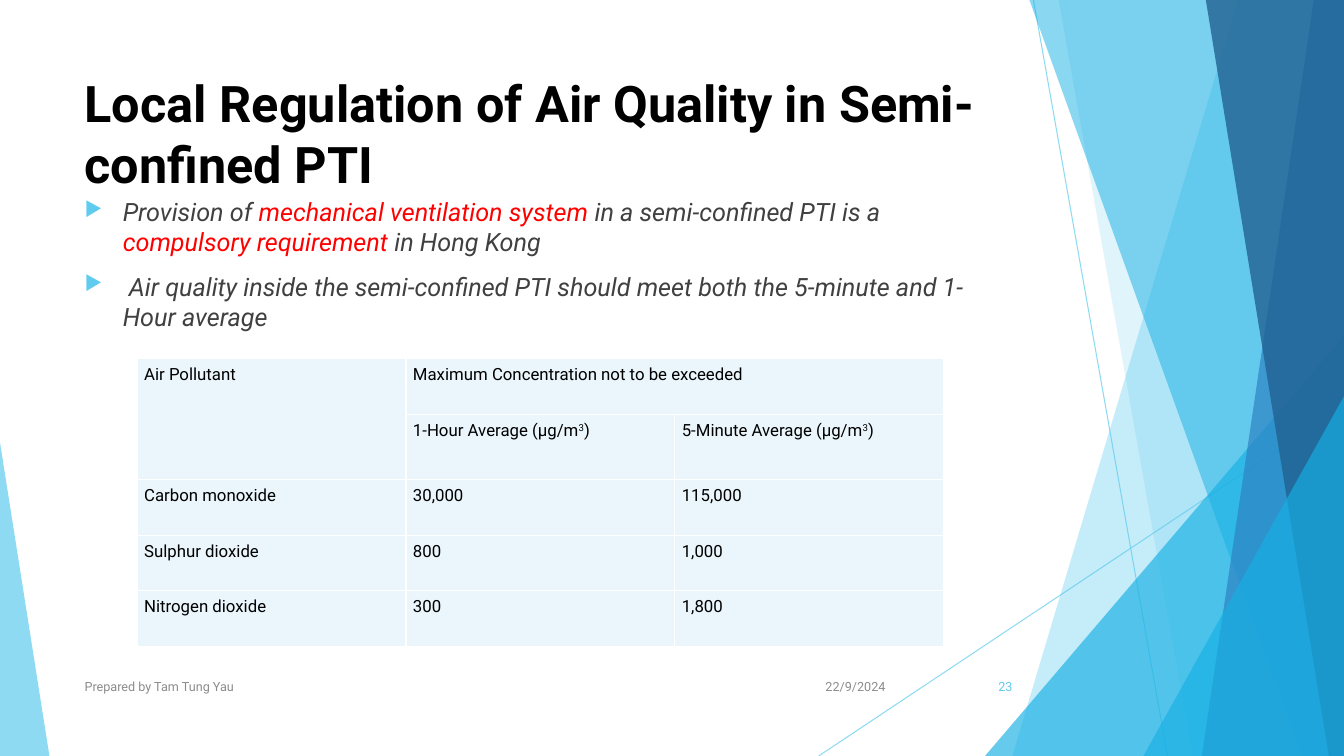
"""Build the slide on local air quality regulation in semi-confined PTIs."""
from lxml import etree
from pptx import Presentation
from pptx.dml.color import RGBColor
from pptx.enum.shapes import MSO_CONNECTOR, MSO_SHAPE
from pptx.enum.text import MSO_ANCHOR, PP_ALIGN
from pptx.oxml.ns import qn
from pptx.util import Inches, Pt

LEFT, RIGHT, JUSTIFY = PP_ALIGN.LEFT, PP_ALIGN.RIGHT, PP_ALIGN.JUSTIFY
TOP, MIDDLE = MSO_ANCHOR.TOP, MSO_ANCHOR.MIDDLE
TRIANGLE, STRAIGHT = MSO_SHAPE.ISOSCELES_TRIANGLE, MSO_CONNECTOR.STRAIGHT

WIDTH, HEIGHT = 13.33, 7.5
MARGIN, CONTENT_WIDTH = 0.74, 9.4
FONT = "Roboto"
SKY, CYAN, BLUE, NAVY = "5FCBEF", "17B0E4", "2E83C3", "226292"
BLACK, DARK, GREY, RED, PALE, WHITE = "000000", "404040", "8C8C8C", "FF0000", "EAF6FC", "FFFFFF"

TITLE = "Local Regulation of Air Quality in Semi-confined PTI"
BULLETS = [
    [("Provision of ", DARK), ("mechanical ventilation system", RED),
     (" in a semi-confined PTI is a ", DARK), ("compulsory requirement ", RED),
     ("in Hong Kong", DARK)],
    [(" Air quality inside the semi-confined PTI should meet both the 5-minute and 1-Hour average", DARK)],
]
LIMITS = [
    ["Air Pollutant", "Maximum Concentration not to be exceeded", ""],
    ["", "1-Hour Average (μg/m^3^)", "5-Minute Average (μg/m^3^)"],
    ["Carbon monoxide", "30,000", "115,000"],
    ["Sulphur dioxide", "800", "1,000"],
    ["Nitrogen dioxide", "300", "1,800"],
]
LIMITS_LEFT, LIMITS_TOP, LIMITS_WIDTH = 1.36, 3.56, 8
ROW_HEIGHTS = [0.55, 0.65, 0.55, 0.55, 0.55]
FOOTERS = [
    ("22/9/2024", 7.88, 1, RIGHT, GREY),
    ("Prepared by Tam Tung Yau", MARGIN, 6.89, LEFT, GREY),
    ("23", 9.39, 0.75, RIGHT, SKY),
]
RAYS = [(10.25, 0, 11.58, HEIGHT), (WIDTH, 4.03, 8.12, HEIGHT)]
# Each band reaches the right edge: top-left x, bottom-left x, colour, opacity.
BANDS_BEHIND = [(12.28, 10.04, SKY, 36), (10.5, 11.83, SKY, 20)]
BANDS_FRONT = [(10.21, 12.91, CYAN, 50), (13.03, 11.92, BLUE, 70), (11.96, 13.18, NAVY, 80)]
WEDGE_BEHIND = (9.77, 3.33, 3.56, 1, CYAN, 66)
WEDGES_FRONT = [(11.34, 3.93, 1.99, 1, CYAN, 66), (0, 4.39, 0.49, 0, SKY, 70)]


def paint(fill, color, opacity=100):
    fill.solid()
    fill.fore_color.rgb = RGBColor.from_string(color)
    if opacity < 100:
        tint = fill._xPr.find(".//" + qn("a:srgbClr"))
        etree.SubElement(tint, qn("a:alpha"), val=str(opacity * 1000))


def style(run, size, color, bold=False, italic=False):
    run.font.name, run.font.size = FONT, Pt(size)
    run.font.bold, run.font.italic = bold, italic
    run.font.color.rgb = RGBColor.from_string(color)


def add_ray(slide, ends):
    ray = slide.shapes.add_connector(STRAIGHT, *map(Inches, ends))
    ray.line.width = Pt(0.75)
    paint(ray.line.fill, SKY, 70)
    etree.SubElement(ray._element.spPr, qn("a:effectLst"))


def finish(shape, color, opacity):
    paint(shape.fill, color, opacity)
    shape.line.fill.background()
    shape.shadow.inherit = False


def add_band(slide, top_x, bottom_x, color, opacity):
    corners = [(top_x, 0), (WIDTH, 0), (WIDTH, HEIGHT), (bottom_x, HEIGHT)]
    points = [(Inches(x), Inches(y)) for x, y in corners]
    outline = slide.shapes.build_freeform(*points[0])
    outline.add_line_segments(points[1:], close=True)
    finish(outline.convert_to_shape(), color, opacity)


def add_wedge(slide, left, top, width, apex, color, opacity):
    wedge = slide.shapes.add_shape(TRIANGLE, *map(Inches, (left, top, width, HEIGHT - top)))
    wedge.adjustments[0] = apex
    finish(wedge, color, opacity)


def add_decor(slide):
    for ends in RAYS:
        add_ray(slide, ends)
    for band in BANDS_BEHIND:
        add_band(slide, *band)
    add_wedge(slide, *WEDGE_BEHIND)
    for band in BANDS_FRONT:
        add_band(slide, *band)
    for wedge in WEDGES_FRONT:
        add_wedge(slide, *wedge)


def add_title(slide):
    title = slide.shapes.title
    title.left, title.top, title.width, title.height = map(Inches, (MARGIN, 0.67, CONTENT_WIDTH, 1.23))
    title.text_frame.text = TITLE
    title.text_frame.word_wrap = True
    title.text_frame.vertical_anchor = TOP
    heading = title.text_frame.paragraphs[0]
    heading.alignment = LEFT
    style(heading.runs[0], 36, BLACK, bold=True)


def add_bullet(paragraph):
    props = paragraph._p.get_or_add_pPr()
    props.set("marL", str(Inches(0.38)))
    props.set("indent", str(-Inches(0.38)))
    tint = etree.SubElement(props, qn("a:buClr"))
    etree.SubElement(tint, qn("a:srgbClr"), val=SKY)
    etree.SubElement(props, qn("a:buSzPct"), val="80000")
    etree.SubElement(props, qn("a:buChar"), char="▶")


def add_body(slide):
    body = slide.shapes.add_textbox(*map(Inches, (MARGIN, 1.9, CONTENT_WIDTH, 4.71))).text_frame
    body.word_wrap = True
    for index, pieces in enumerate(BULLETS):
        paragraph = body.add_paragraph() if index else body.paragraphs[0]
        add_bullet(paragraph)
        paragraph.space_before = Pt(10 if index else 0)
        for text, color in pieces:
            run = paragraph.add_run()
            run.text = text
            style(run, 18, color, italic=True)


def add_borders(cell):
    props = cell._tc.get_or_add_tcPr()
    for position, side in enumerate(("a:lnL", "a:lnR", "a:lnT", "a:lnB")):
        border = etree.Element(qn(side), w=str(Pt(1)))
        fill = etree.SubElement(border, qn("a:solidFill"))
        etree.SubElement(fill, qn("a:srgbClr"), val=WHITE)
        props.insert(position, border)


def fill_cell(cell, text):
    cell.margin_left = cell.margin_right = Inches(0.07)
    cell.margin_top, cell.margin_bottom = Inches(0.01), 0
    paint(cell.fill, PALE)
    add_borders(cell)
    if not text:
        return
    paragraph = cell.text_frame.paragraphs[0]
    paragraph.alignment = JUSTIFY
    paragraph.line_spacing, paragraph.space_after = 1.28, Pt(18.6)
    for index, piece in enumerate(text.split("^")):
        run = paragraph.add_run()
        run.text = piece
        style(run, 12, BLACK)
        if index % 2:
            run._r.get_or_add_rPr().set("baseline", "30000")


def add_limits(slide):
    columns = len(LIMITS[0])
    area = map(Inches, (LIMITS_LEFT, LIMITS_TOP, LIMITS_WIDTH, sum(ROW_HEIGHTS)))
    limits = slide.shapes.add_table(len(LIMITS), columns, *area).table
    limits.first_row = limits.horz_banding = False
    for row, height in zip(limits.rows, ROW_HEIGHTS):
        row.height = Inches(height)
    for r, texts in enumerate(LIMITS):
        for c, text in enumerate(texts):
            fill_cell(limits.cell(r, c), text)
    limits.cell(0, 0).merge(limits.cell(1, 0))
    limits.cell(0, 1).merge(limits.cell(0, 2))


def add_footer(slide, text, left, width, alignment, color):
    footer = slide.shapes.add_textbox(*map(Inches, (left, 6.61, width, 0.4))).text_frame
    footer.text = text
    footer.word_wrap = True
    footer.vertical_anchor = MIDDLE
    footer.paragraphs[0].alignment = alignment
    style(footer.paragraphs[0].runs[0], 9, color)


def main():
    deck = Presentation()
    deck.slide_width, deck.slide_height = Inches(WIDTH), Inches(HEIGHT)
    slide = deck.slides.add_slide(deck.slide_layouts[5])
    add_decor(slide)
    add_title(slide)
    add_body(slide)
    add_limits(slide)
    for footer in FOOTERS:
        add_footer(slide, *footer)
    deck.save("out.pptx")


if __name__ == "__main__":
    main()
